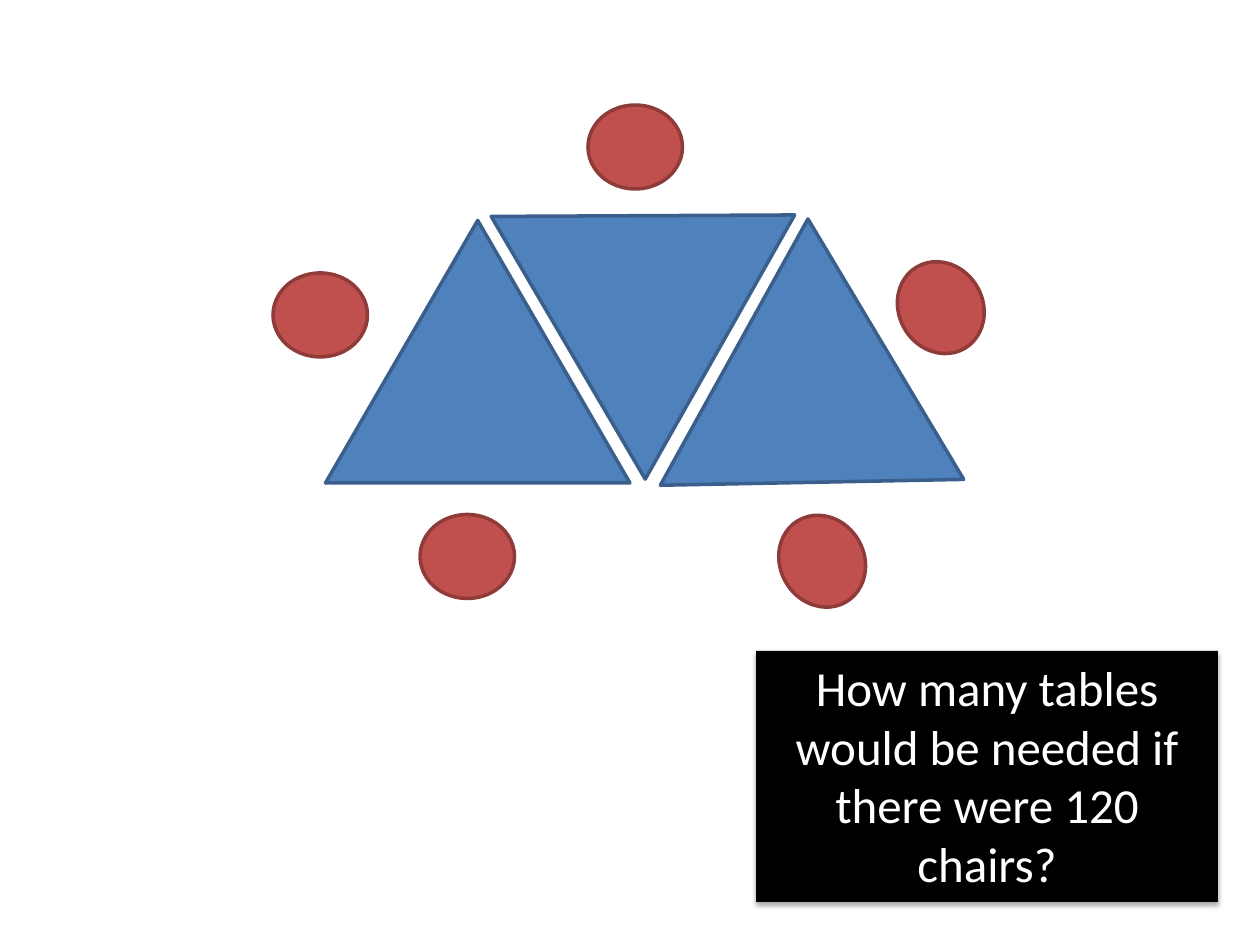
from dataclasses import dataclass

from lxml import etree
from pptx import Presentation
from pptx.dml.color import RGBColor
from pptx.enum.shapes import MSO_SHAPE
from pptx.enum.text import MSO_ANCHOR, MSO_AUTO_SIZE, PP_ALIGN
from pptx.oxml.ns import qn
from pptx.shapes.autoshape import Shape
from pptx.util import Emu, Inches, Pt

TRIANGLE, OVAL, RECT = MSO_SHAPE.ISOSCELES_TRIANGLE, MSO_SHAPE.OVAL, MSO_SHAPE.RECTANGLE
COLS, ROWS = 120, 90
BLANK_LAYOUT = 6


@dataclass(frozen=True)
class Theme:
    table: str = "4F81BD"
    table_line: str = "3A5F8C"
    chair: str = "C0504D"
    chair_line: str = "8E3B39"
    box: str = "000000"
    text: str = "FFFFFF"
    font: str = "Calibri"
    size: float = 28
    line_width: float = 2


@dataclass(frozen=True)
class Style:
    preset: MSO_SHAPE
    width: float
    height: float
    fill: str
    line: str | None = None


@dataclass(frozen=True)
class Place:
    """Left and top in grid columns and rows, with a turn in degrees."""
    col: float
    row: float
    turn: float = 0


THEME = Theme()
TABLE = Style(TRIANGLE, 29, 25, THEME.table, THEME.table_line)
CHAIR = Style(OVAL, 9, 8, THEME.chair, THEME.chair_line)
QUESTION_BOX = Style(RECT, 44, 23.9, THEME.box)

TABLES = [Place(31, 21), Place(50.4, 14.3, 59.6)]
CHAIRS = [Place(26, 26), Place(40, 49), Place(56, 10)]
TURNED_TABLE = Place(66.35, 27.1, 119)
TURNED_CHAIRS = [Place(85.1, 25.3, 59.4), Place(73.8, 49.45, 59.4)]
QUESTION = "How many tables would be needed if there were 120 chairs?"

prs = Presentation()
prs.slide_width, prs.slide_height = Inches(10), Inches(7.5)


def x(cols: float) -> Emu:
    return Emu(round(prs.slide_width * cols / COLS))


def y(rows: float) -> Emu:
    return Emu(round(prs.slide_height * rows / ROWS))


def draw(shapes, style: Style, place: Place) -> Shape:
    sp = shapes.add_shape(style.preset, x(place.col), y(place.row),
                          x(style.width), y(style.height))
    sp.rotation = place.turn
    sp.shadow.inherit = False
    sp.fill.solid()
    sp.fill.fore_color.rgb = RGBColor.from_string(style.fill)
    if style.line:
        sp.line.color.rgb = RGBColor.from_string(style.line)
        sp.line.width = Pt(THEME.line_width)
    else:
        sp.line.fill.background()
    return sp


def add_shadow(sp: Shape, blur: float, distance: float, opacity: int) -> None:
    """Cast a black shadow straight down; lengths in points, opacity in percent."""
    effects = sp._element.spPr.find(qn("a:effectLst"))
    shadow = etree.SubElement(effects, qn("a:outerShdw"), blurRad=str(Pt(blur)),
                              dist=str(Pt(distance)), dir="5400000", rotWithShape="0")
    color = etree.SubElement(shadow, qn("a:srgbClr"), val="000000")
    etree.SubElement(color, qn("a:alpha"), val=str(opacity * 1000))


def write(sp: Shape, text: str) -> None:
    tf = sp.text_frame
    tf.word_wrap = True
    tf.auto_size = MSO_AUTO_SIZE.SHAPE_TO_FIT_TEXT
    tf.vertical_anchor = MSO_ANCHOR.TOP
    p = tf.paragraphs[0]
    p.alignment = PP_ALIGN.CENTER
    r = p.add_run()
    r.text = text
    r.font.name = THEME.font
    r.font.size = Pt(THEME.size)
    r.font.color.rgb = RGBColor.from_string(THEME.text)


def main() -> None:
    s = prs.slides.add_slide(prs.slide_layouts[BLANK_LAYOUT])
    for place in TABLES:
        draw(s.shapes, TABLE, place)
    for place in CHAIRS:
        draw(s.shapes, CHAIR, place)

    group = s.shapes.add_group_shape()
    draw(group.shapes, TABLE, TURNED_TABLE)
    for place in TURNED_CHAIRS:
        draw(group.shapes, CHAIR, place)

    box = draw(s.shapes, QUESTION_BOX, Place(72, 62))
    add_shadow(box, blur=3.1, distance=1.8, opacity=35)
    write(box, QUESTION)
    prs.save("out.pptx")


if __name__ == "__main__":
    main()
